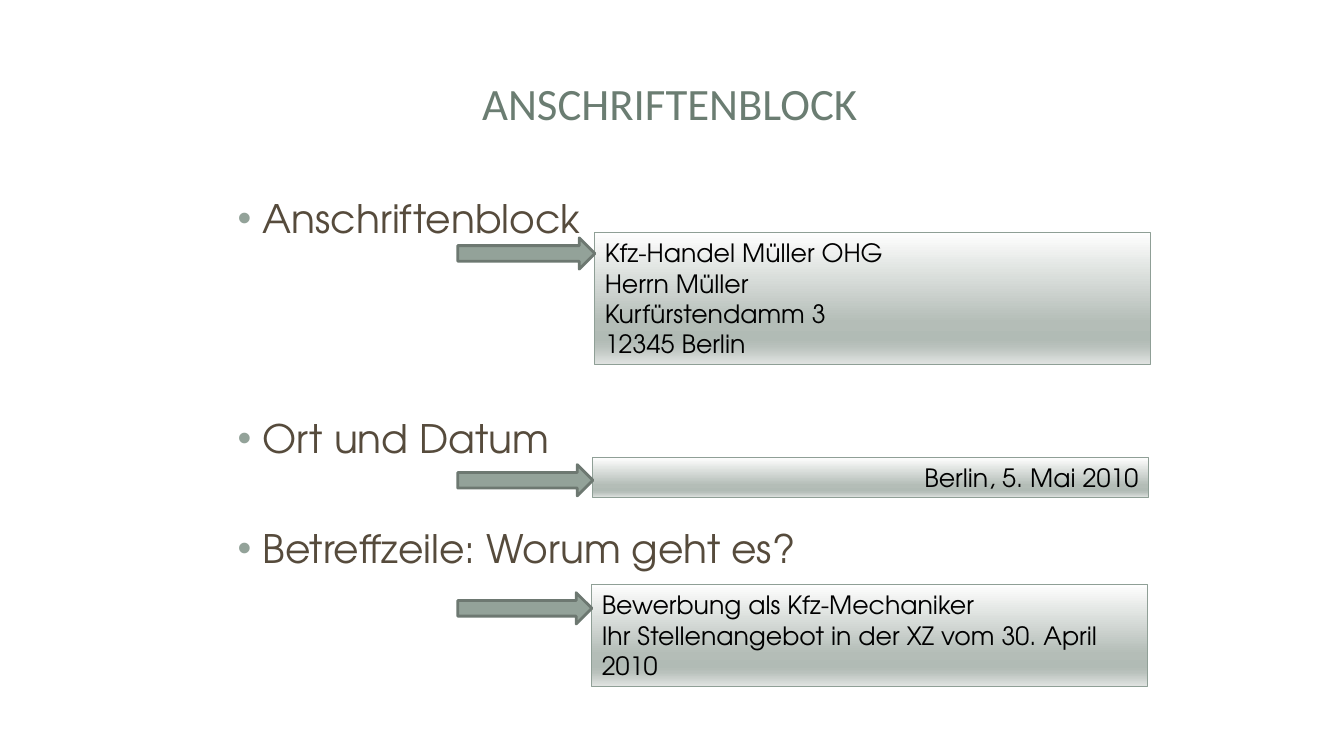
import pptx
import pptx.util
import pptx.dml.color
import pptx.enum.shapes
import pptx.enum.text
import pptx.oxml
import pptx.oxml.ns
from pptx.util import Inches

BODY_FONT = "TeX Gyre Adventor"
ALIGN = pptx.enum.text.PP_ALIGN
ANCHOR = pptx.enum.text.MSO_ANCHOR
SHAPE = pptx.enum.shapes.MSO_SHAPE
GRADIENT = [(0, "FEFEFE"), (68, "B4BDB7"), (81, "B1BBB5"), (86, "B9C1BC"), (100, "E1E4E2")]


def color(value):
    return pptx.dml.color.RGBColor.from_string(value)


def drawing_element(xml):
    return pptx.oxml.parse_xml(xml.replace(" ", f' {pptx.oxml.ns.nsdecls("a")} ', 1))


def write(frame, lines, size=18, font=BODY_FONT, fill="000000",
          align=ALIGN.LEFT, anchor=ANCHOR.TOP):
    frame.word_wrap = True
    frame.vertical_anchor = anchor
    for index, line in enumerate(lines):
        paragraph = frame.paragraphs[0] if index == 0 else frame.add_paragraph()
        paragraph.alignment = align
        run = paragraph.add_run()
        run.text = line
        run.font.size = pptx.util.Pt(size)
        run.font.name = font
        run.font.color.rgb = color(fill)


def add_box(slide, kind, box, line, width):
    shape = slide.shapes.add_shape(kind, *map(Inches, box))
    shape.shadow.inherit = False
    shape.line.color.rgb = color(line)
    shape.line.width = pptx.util.Pt(width)
    return shape


def add_title(slide, box, text):
    shape = slide.shapes.add_textbox(*map(Inches, box))
    write(shape.text_frame, [text], size=32, font="Calibri", fill="6B7D72",
          align=ALIGN.CENTER, anchor=ANCHOR.MIDDLE)


def add_bullets(slide, box, items):
    """Each item is its text and the space before it in points."""
    shape = slide.shapes.add_textbox(*map(Inches, box))
    write(shape.text_frame, [text for text, space in items], size=28, fill="564B3C")
    for paragraph, (text, space) in zip(shape.text_frame.paragraphs, items):
        paragraph.space_before = pptx.util.Pt(space)
        properties = paragraph._p.get_or_add_pPr()
        properties.set("marL", str(Inches(0.38)))
        properties.set("indent", str(Inches(-0.25)))
        properties.append(drawing_element('<a:buClr ><a:srgbClr val="93A299"/></a:buClr>'))
        properties.append(drawing_element('<a:buFont typeface="Arial"/>'))
        properties.append(drawing_element('<a:buChar char="•"/>'))


def add_example(slide, box, lines, arrow_offset, align=ALIGN.LEFT):
    """Shaded example with an arrow that ends at its left edge."""
    left, top, width, height = box
    panel = add_box(slide, SHAPE.RECTANGLE, box, "8F9F96", 0.75)
    panel.fill.gradient()
    panel.fill.gradient_angle = 270
    stops = panel._element.spPr.find(".//" + pptx.oxml.ns.qn("a:gsLst"))
    for stop in list(stops):
        stops.remove(stop)
    for position, value in GRADIENT:
        stops.append(drawing_element(
            f'<a:gs pos="{position * 1000}"><a:srgbClr val="{value}"/></a:gs>'))
    write(panel.text_frame, lines, align=align)

    arrow_left = 4.54
    arrow_box = (arrow_left, top + arrow_offset, left - arrow_left, 0.31)
    arrow = add_box(slide, SHAPE.RIGHT_ARROW, arrow_box, "6D7871", 2)
    arrow.fill.solid()
    arrow.fill.fore_color.rgb = color("93A299")


def main():
    presentation = pptx.Presentation()
    presentation.slide_width = Inches(13.33)
    presentation.slide_height = Inches(7.5)
    slide = presentation.slides.add_slide(presentation.slide_layouts[6])

    # Title and headings
    add_title(slide, (0.62, 0.45, 12.05, 1.14), "ANSCHRIFTENBLOCK")
    add_bullets(slide, (2.13, 1.88, 6.74, 4.82), [
        ("Anschriftenblock", 0),
        ("Ort und Datum", 123.5),
        ("Betreffzeile: Worum geht es?", 45),
    ])

    # Examples
    add_example(slide, (5.9, 2.31, 5.51, 1.31),
                ["Kfz-Handel Müller OHG", "Herrn Müller", "Kurfürstendamm 3", "12345 Berlin"],
                arrow_offset=0.05)
    add_example(slide, (5.88, 4.54, 5.51, 0.4), ["Berlin, 5. Mai 2010"],
                arrow_offset=0.07, align=ALIGN.RIGHT)
    add_example(slide, (5.87, 5.8, 5.51, 1.01),
                ["Bewerbung als Kfz-Mechaniker",
                 "Ihr Stellenangebot in der XZ vom 30. April 2010"],
                arrow_offset=0.08)

    presentation.save("out.pptx")


if __name__ == "__main__":
    main()
